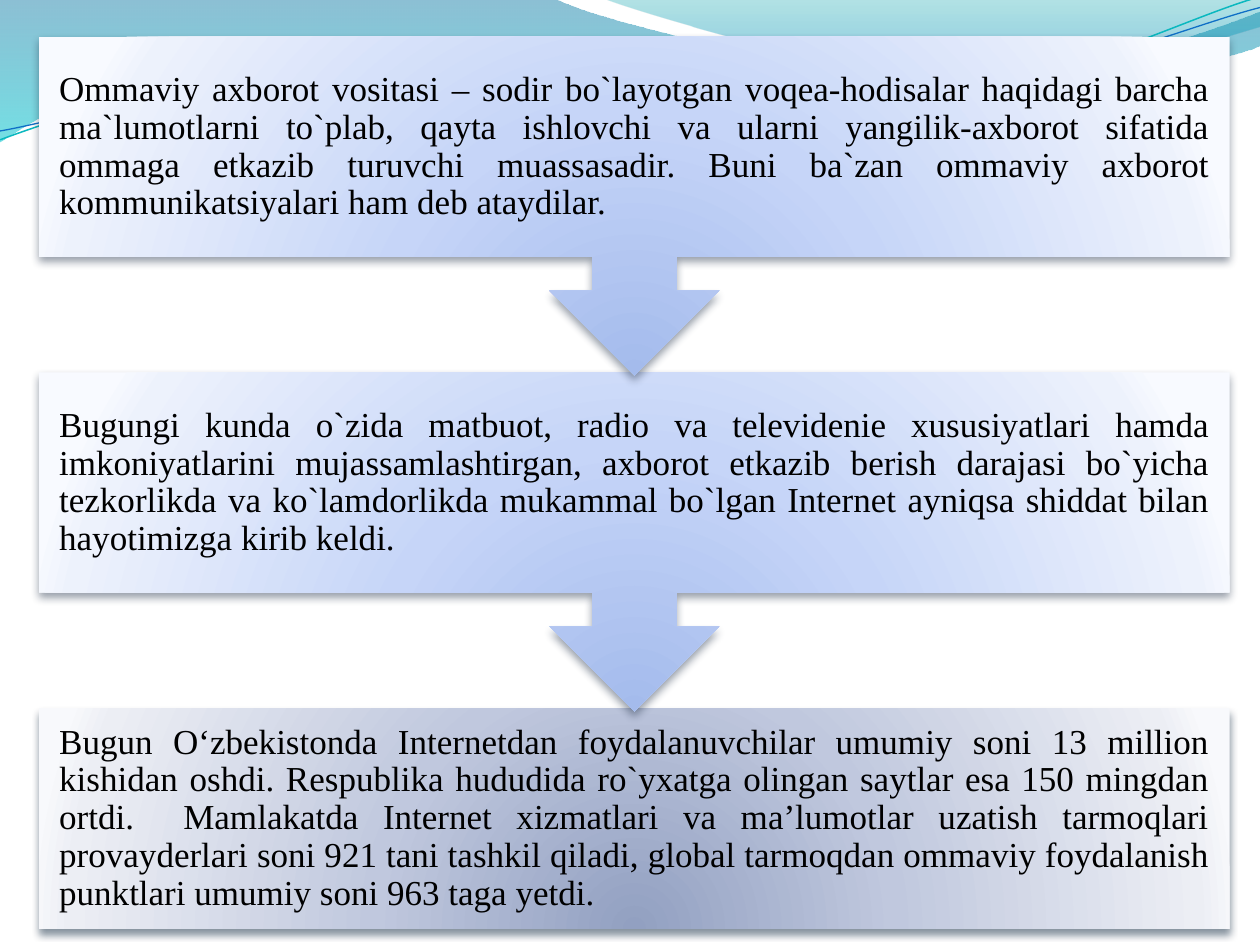
from dataclasses import dataclass
from math import cos, radians, sin

from lxml import etree
from pptx import Presentation
from pptx.dml.color import RGBColor
from pptx.enum.shapes import MSO_SHAPE as SHAPE
from pptx.enum.text import MSO_ANCHOR, PP_ALIGN
from pptx.oxml import parse_xml
from pptx.oxml.ns import nsdecls, qn
from pptx.util import Inches, Pt


@dataclass(frozen=True)
class Theme:
    font: str = "Times New Roman"
    size: int = 20
    text: str = "000000"
    # Gradient stops: position %, colour, opacity %
    blue: tuple = ((0, "A4BBEC", 100), (43, "C6D5F8", 100), (93, "EDF2FC", 100), (100, "F8FAFF", 100))
    slate: tuple = ((0, "92A0C1", 100), (43, "C0C8DE", 100), (93, "ECEEF4", 100), (100, "F8F9FC", 100))
    wave_left: tuple = ((0, "0074A1", 45), (100, "00C6CF", 55))
    wave_right: tuple = ((0, "00A1A9", 30), (80, "008BBF", 45))
    blue_shadow: str = "26354C"
    slate_shadow: str = "031D35"
    teal_line: str = "0AB8BF"
    blue_line: str = "0F6FC6"


THEME = Theme()
LINEAR = '<a:lin ang="5400000" scaled="0"/>'
RADIAL = '<a:path path="circle"><a:fillToRect l="50000" t="130000" r="50000" b="-30000"/></a:path>'

# Flow of boxes, from top to bottom
LEFT, TOP, WIDTH = 0.31, 0.29, 9.45
BOX_H, CALLOUT_H, STEP = 1.75, 2.69, 2.665
STATEMENTS = [
    "Ommaviy axborot vositasi – sodir bo`layotgan voqea-hodisalar haqidagi barcha "
    "ma`lumotlarni to`plab, qayta ishlovchi va ularni yangilik-axborot sifatida ommaga "
    "etkazib turuvchi muassasadir. Buni ba`zan ommaviy axborot kommunikatsiyalari ham "
    "deb ataydilar.",
    "Bugungi kunda o`zida matbuot, radio va televidenie xususiyatlari hamda "
    "imkoniyatlarini mujassamlashtirgan, axborot etkazib berish darajasi bo`yicha "
    "tezkorlikda va ko`lamdorlikda mukammal bo`lgan Internet ayniqsa shiddat bilan "
    "hayotimizga kirib keldi.",
    "Bugun O‘zbekistonda Internetdan foydalanuvchilar umumiy soni 13 million kishidan "
    "oshdi. Respublika hududida ro`yxatga olingan saytlar esa 150 mingdan ortdi.  "
    "Mamlakatda Internet xizmatlari va ma’lumotlar uzatish tarmoqlari provayderlari soni "
    "921 tani tashkil qiladi, global tarmoqdan ommaviy foydalanish punktlari umumiy soni "
    "963 taga yetdi.",
]

# Wave outlines: a step of one point is a straight line, of three points a Bezier curve
WAVE_LEFT = [
    [(0, 0)], [(4.4, -0.01)], [(4.76, 0.17), (6.64, 0.63), (7.58, 0.63)],
    [(8.53, 0.63), (9.58, 0.26), (10, 0.09)], [(10.01, 0.36)],
    [(9.83, 0.44), (8.7, 0.76), (7.46, 0.75)], [(6.22, 0.75), (3.82, 0.28), (2.57, 0.34)],
    [(1.29, 0.36), (0.46, 0.83), (-0.01, 1.13)], [(0, 0)],
]
WAVE_RIGHT = [
    [(4.79, -0.01)], [(5.09, 0.11), (6.82, 0.62), (7.69, 0.65)],
    [(8.56, 0.69), (9.61, 0.32), (10, 0.21)], [(10, 0)], [(4.79, -0.01)],
]
TEAL_CURVE = [
    [(0, 1.11)], [(0.48, 0.93), (1.58, 0.57), (2.77, 0.52)],
    [(3.95, 0.47), (5.93, 0.89), (7.13, 0.8)], [(8.33, 0.71), (9.38, 0.15), (9.98, -0.02)],
]
BLUE_CURVE = [
    [(0, 1.04)], [(0.47, 0.96), (1.64, 0.61), (2.83, 0.56)],
    [(4.03, 0.51), (5.97, 0.84), (7.17, 0.75)], [(8.36, 0.67), (9.41, 0.21), (10, 0.06)],
]
CURVE_TILT = -2.7


def turn(steps, degrees, center):
    """Turn all points clockwise about the center."""
    c, n = cos(radians(degrees)), sin(radians(degrees))
    cx, cy = center
    return [
        [(cx + (x - cx) * c - (y - cy) * n, cy + (x - cx) * n + (y - cy) * c) for x, y in step]
        for step in steps
    ]


def set_gradient(sp, stops, direction):
    gs = "".join(
        f'<a:gs pos="{pos * 1000}"><a:srgbClr val="{color}">'
        f'<a:alpha val="{alpha * 1000}"/></a:srgbClr></a:gs>'
        for pos, color, alpha in stops
    )
    sp.fill.background()
    no_fill = sp._element.spPr.find(qn("a:noFill"))
    grad = parse_xml(
        f'<a:gradFill {nsdecls("a")} rotWithShape="1"><a:gsLst>{gs}</a:gsLst>{direction}</a:gradFill>'
    )
    no_fill.getparent().replace(no_fill, grad)


def set_shadow(sp, color):
    sp.shadow.inherit = False
    effects = sp._element.spPr.find(qn("a:effectLst"))
    shadow = etree.SubElement(
        effects, qn("a:outerShdw"),
        blurRad=str(Pt(4.5)), dist=str(Pt(3)), dir="5400000", rotWithShape="0",
    )
    clr = etree.SubElement(shadow, qn("a:srgbClr"), val=color)
    etree.SubElement(clr, qn("a:alpha"), val="48000")


def add_outline(s, steps, closed):
    # The end points give the frame, then the segments become true curves
    ends = [(Inches(x), Inches(y)) for x, y in (step[-1] for step in steps)]
    builder = s.shapes.build_freeform(*ends[0])
    builder.add_line_segments(ends[1:], close=closed)
    sp = builder.convert_to_shape()
    sp.shadow.inherit = False

    outline = next(sp._element.iter(qn("a:path")))
    for child in list(outline):
        outline.remove(child)
    for i, step in enumerate(steps):
        tag = "a:moveTo" if i == 0 else "a:lnTo" if len(step) == 1 else "a:cubicBezTo"
        segment = etree.SubElement(outline, qn(tag))
        for x, y in step:
            etree.SubElement(segment, qn("a:pt"), x=str(Inches(x) - sp.left), y=str(Inches(y) - sp.top))
    if closed:
        etree.SubElement(outline, qn("a:close"))
    return sp


def add_wave(s, steps, stops):
    sp = add_outline(s, steps, closed=True)
    set_gradient(sp, stops, LINEAR)
    sp.line.fill.background()


def add_curve(s, steps, center, color, width):
    sp = add_outline(s, turn(steps, -CURVE_TILT, center), closed=False)
    sp.rotation = CURVE_TILT
    sp.fill.background()
    sp.line.color.rgb = RGBColor.from_string(color)
    sp.line.width = Pt(width)


def add_box(s, preset, top, height, stops, shadow, rotation=0):
    sp = s.shapes.add_shape(preset, Inches(LEFT), Inches(top), Inches(WIDTH), Inches(height))
    sp.rotation = rotation
    set_gradient(sp, stops, RADIAL)
    sp.line.fill.background()
    set_shadow(sp, shadow)


def add_statement(s, top, text):
    sp = s.shapes.add_textbox(Inches(LEFT), Inches(top), Inches(WIDTH), Inches(BOX_H))
    tf = sp.text_frame
    tf.word_wrap = True
    tf.vertical_anchor = MSO_ANCHOR.MIDDLE
    tf.margin_left = tf.margin_right = tf.margin_top = tf.margin_bottom = Inches(0.16)
    p = tf.paragraphs[0]
    p.alignment = PP_ALIGN.JUSTIFY
    p.line_spacing = 0.9
    r = p.add_run()
    r.text = text
    r.font.name = THEME.font
    r.font.size = Pt(THEME.size)
    r.font.color.rgb = RGBColor.from_string(THEME.text)


def main():
    prs = Presentation()
    prs.slide_width, prs.slide_height = Inches(10), Inches(7.5)
    s = prs.slides.add_slide(prs.slide_layouts[6])

    # Wave decoration along the top edge
    add_wave(s, WAVE_LEFT, THEME.wave_left)
    add_wave(s, WAVE_RIGHT, THEME.wave_right)
    add_curve(s, TEAL_CURVE, (4.99, 0.58), THEME.teal_line, 0.85)
    add_curve(s, BLUE_CURVE, (5, 0.59), THEME.blue_line, 0.75)

    # Statements, built from the bottom so that each arrow lies over the next box
    last = len(STATEMENTS) - 1
    for i, text in reversed(list(enumerate(STATEMENTS))):
        top = TOP + i * STEP
        if i == last:
            add_box(s, SHAPE.RECTANGLE, top, BOX_H, THEME.slate, THEME.slate_shadow)
        else:
            add_box(s, SHAPE.UP_ARROW_CALLOUT, top, CALLOUT_H, THEME.blue, THEME.blue_shadow, 180)
        add_statement(s, top, text)

    prs.save("out.pptx")


if __name__ == "__main__":
    main()
